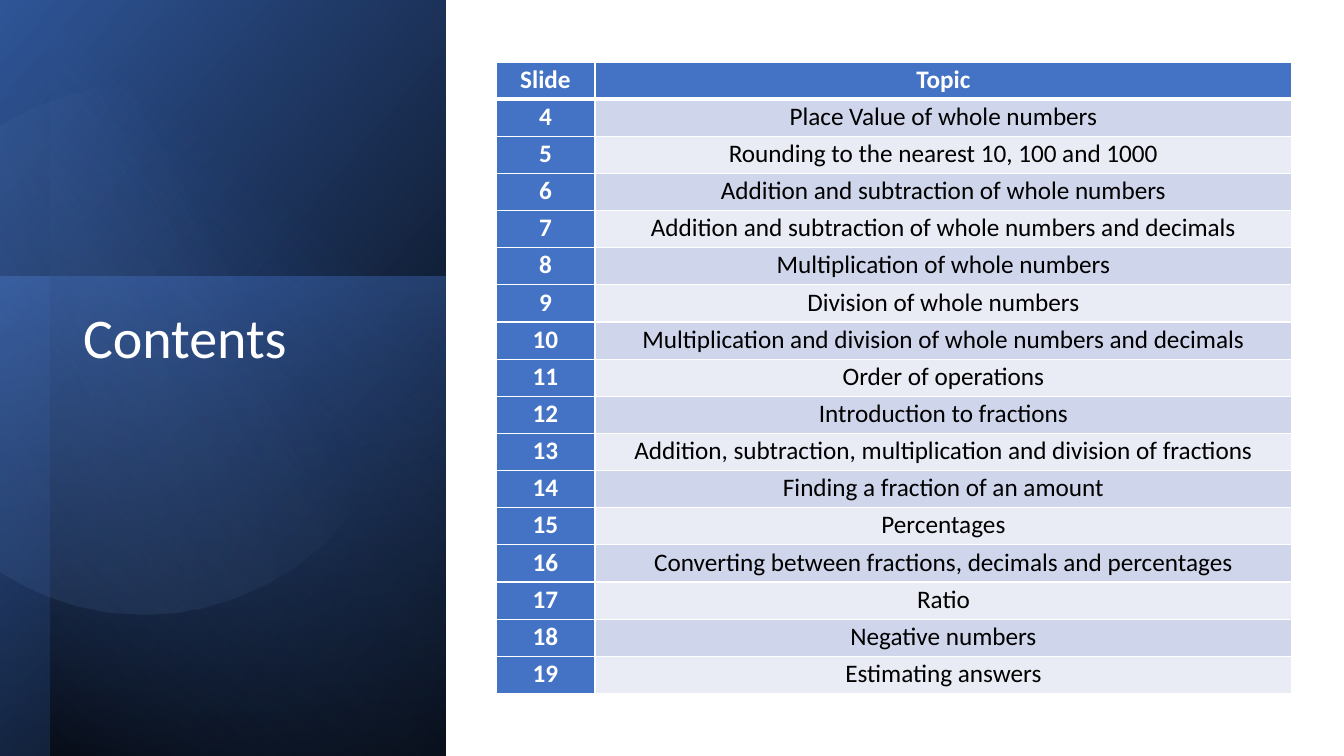
import math
from pptx import Presentation, util as u
from pptx.dml.color import RGBColor
from pptx.enum import shapes, text
from pptx.oxml import parse_xml
from pptx.oxml.ns import nsdecls, qn

TITLE = "Contents"
HEADER = ("Slide", "Topic")
FIRST_SLIDE = 4
TOPICS = [
    "Place Value of whole numbers",
    "Rounding to the nearest 10, 100 and 1000",
    "Addition and subtraction of whole numbers",
    "Addition and subtraction of whole numbers and decimals",
    "Multiplication of whole numbers",
    "Division of whole numbers",
    "Multiplication and division of whole numbers and decimals",
    "Order of operations",
    "Introduction to fractions",
    "Addition, subtraction, multiplication and division of fractions",
    "Finding a fraction of an amount",
    "Percentages",
    "Converting between fractions, decimals and percentages",
    "Ratio",
    "Negative numbers",
    "Estimating answers",
]
COLORS = {
    "white": "FFFFFF", "black": "000000", "blue": "4472C4", "deep": "2F5597",
    "navy": "203864", "sky": "8FAADC", "odd": "CFD5EA", "even": "E9EBF5",
}
FONT = "Calibri"
PX = 914400 / 100.8

PANELS = [
    {"box": (-156, 156, 758, 446), "rotation": 90, "flip": True, "angle": 310,
     "stops": [(0, "black", 100), (100, "deep", 100)]},
    {"box": (-17, 293, 480, 446), "rotation": 270, "flip": False, "angle": 190,
     "stops": [(0, "blue", 50), (100, "navy", 0)]},
    {"box": (-130, 180, 756, 395), "rotation": 270, "flip": True, "angle": 220,
     "stops": [(0, "black", 59), (69, "blue", 0)]},
]
DISC = {"box": (-83, 132, 530, 451), "rotation": 101.6, "flip": False, "angle": 310,
        "stops": [(39, "sky", 0), (100, "deep", 26)]}
DISC_RADIUS = 265
DISC_CENTER_X = 144
DISC_STEPS = 120
TITLE_BOX = (73, 305, 318, 339)
TABLE_BOX = (496, 62, 796, 632)
NUMBER_WIDTH = 99
CELL_INSET = 12


def emu(px):
    return u.Emu(round(px * PX))


def rgb(name):
    return RGBColor.from_string(COLORS[name])


def assign(target, values):
    for name, value in values.items():
        setattr(target, name, value)


def place(shape, box):
    assign(shape, dict(zip(("left", "top", "width", "height"), map(emu, box))))


def style_panel(shape, panel):
    place(shape, panel["box"])
    shape.rotation = panel["rotation"]
    shape.shadow.inherit = False
    shape.line.fill.background()
    if panel["flip"]:
        shape.element.spPr.find(qn("a:xfrm")).set("flipH", "1")
    shape.fill.gradient()
    shape.fill.gradient_angle = panel["angle"]
    for stop, (position, color, _) in zip(shape.fill.gradient_stops, panel["stops"]):
        stop.color.rgb = rgb(color)
        stop.position = position / 100
    tints = shape.element.spPr.iter(qn("a:srgbClr"))
    for tint, (_, _, opacity) in zip(list(tints), panel["stops"]):
        if opacity < 100:
            tint.append(parse_xml(f'<a:alpha {nsdecls("a")} val="{opacity * 1000}"/>'))


def add_disc(slide):
    half_arc = math.acos(-DISC_CENTER_X / DISC_RADIUS)
    start = -half_arc - math.radians(DISC["rotation"])
    angles = [start + 2 * half_arc * step / DISC_STEPS for step in range(DISC_STEPS + 1)]
    points = [(DISC_RADIUS * math.cos(angle), DISC_RADIUS * math.sin(angle)) for angle in angles]
    builder = slide.shapes.build_freeform(*points[0], scale=PX)
    builder.add_line_segments(points[1:], close=True)
    style_panel(builder.convert_to_shape(), DISC)


def add_title(slide):
    title = slide.shapes.title
    slide.shapes.element.append(title.element)
    place(title, TITLE_BOX)
    title.text = TITLE
    assign(title.text_frame, {"word_wrap": True, "auto_size": text.MSO_AUTO_SIZE.NONE,
                              "vertical_anchor": text.MSO_ANCHOR.TOP})
    paragraph = title.text_frame.paragraphs[0]
    assign(paragraph, {"alignment": text.PP_ALIGN.LEFT, "line_spacing": 0.9})
    assign(paragraph.font, {"name": FONT, "size": u.Pt(40)})
    paragraph.font.color.rgb = rgb("white")


def add_border(cell, side, points):
    cell.get_or_add_tcPr() if hasattr(cell, "get_or_add_tcPr") else None
    properties = cell._tc.get_or_add_tcPr()
    properties.append(parse_xml(
        f'<a:ln{side} {nsdecls("a")} w="{u.Pt(points)}"><a:solidFill>'
        f'<a:srgbClr val="{COLORS["white"]}"/></a:solidFill></a:ln{side}>'))


def format_cell(cell, content, row, column):
    is_label = row == 0 or column == 0
    heavy_side = {0: "B", 1: "T"}.get(row)
    for side in "LRTB":
        add_border(cell, side, 3 if side == heavy_side else 1)
    cell.fill.solid()
    cell.fill.fore_color.rgb = rgb("blue" if is_label else "odd" if row % 2 else "even")
    assign(cell, {"margin_left": emu(CELL_INSET), "margin_right": emu(CELL_INSET),
                  "margin_top": 0, "margin_bottom": 0, "text": content})
    paragraph = cell.text_frame.paragraphs[0]
    assign(paragraph, {"alignment": text.PP_ALIGN.CENTER, "line_spacing": 1.07,
                       "space_after": u.Pt(8)})
    assign(paragraph.font, {"name": FONT, "size": u.Pt(18), "bold": is_label})
    paragraph.font.color.rgb = rgb("white" if is_label else "black")


def add_contents_table(slide):
    rows = [HEADER] + [(str(number), topic) for number, topic in enumerate(TOPICS, FIRST_SLIDE)]
    table = slide.shapes.add_table(len(rows), len(HEADER), *map(emu, TABLE_BOX)).table
    table.first_col = True
    for column, width in zip(table.columns, (NUMBER_WIDTH, TABLE_BOX[2] - NUMBER_WIDTH)):
        column.width = emu(width)
    for row, contents in enumerate(rows):
        for column, content in enumerate(contents):
            format_cell(table.cell(row, column), content, row, column)


def main():
    presentation = Presentation()
    assign(presentation, {"slide_width": emu(1344), "slide_height": emu(756)})
    slide = presentation.slides.add_slide(presentation.slide_layouts[5])
    for panel in PANELS:
        shape = slide.shapes.add_shape(shapes.MSO_SHAPE.RECTANGLE, *map(emu, panel["box"]))
        style_panel(shape, panel)
    add_disc(slide)
    add_title(slide)
    add_contents_table(slide)
    presentation.save("out.pptx")


if __name__ == "__main__":
    main()
